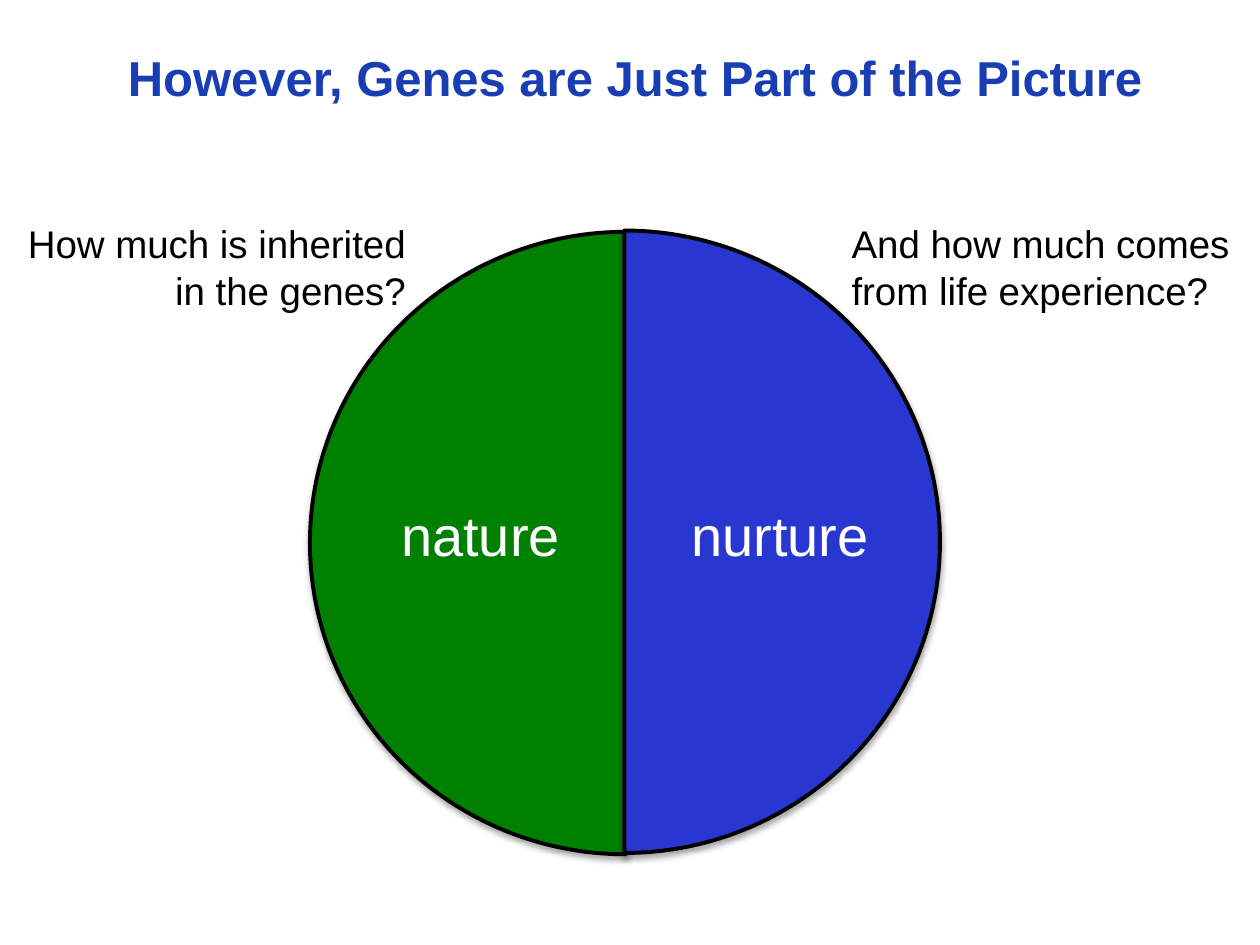
"""Build a slide with a circle split into nature and nurture halves."""
import lxml.etree
import pptx
import pptx.dml.color
import pptx.enum.shapes
import pptx.enum.text
import pptx.oxml
import pptx.oxml.ns
import pptx.util

Inches = pptx.util.Inches
RGB = pptx.dml.color.RGBColor.from_string
ALIGN = pptx.enum.text.PP_ALIGN
THEME = {
    "font": "Arial", "title": "193DB2", "ink": "000000", "label": "FFFFFF",
    "nature": "008000", "nurture": "2937D1",
    "title_size": 28, "label_size": 32, "note_size": 22, "line": 2.25,
}
SHADOW = (
    '<a:effectLst xmlns:a="http://schemas.openxmlformats.org/drawingml/2006/main">'
    '<a:outerShdw blurRad="40000" dist="23000" dir="5400000" rotWithShape="0">'
    '<a:srgbClr val="000000"><a:alpha val="35000"/></a:srgbClr>'
    '</a:outerShdw></a:effectLst>'
)


def write(sp, text, box, size, color, align=ALIGN.CENTER, bold=False, wrap=False):
    sp.left, sp.top, sp.width, sp.height = map(Inches, box)
    tf = sp.text_frame
    tf.text = text
    tf.word_wrap = wrap
    tf.auto_size = pptx.enum.text.MSO_AUTO_SIZE.SHAPE_TO_FIT_TEXT
    tf.vertical_anchor = pptx.enum.text.MSO_ANCHOR.TOP
    for p in tf.paragraphs:
        p.alignment = align
        for r in p.runs:
            r.font.name = THEME["font"]
            r.font.size = pptx.util.Pt(THEME[size])
            r.font.bold = bold
            r.font.color.rgb = RGB(THEME[color])


prs = pptx.Presentation()
prs.slide_width, prs.slide_height = Inches(10), Inches(7.5)
s = prs.slides.add_slide(prs.slide_layouts[5])

halves = [
    ("nature", 2.46, 1.84, 54, 162, (3.08, 3.92, 1.47, 0.64)),
    ("nurture", 2.45, 1.83, 162, 54, (5.38, 3.92, 1.62, 0.64)),
]
for name, left, top, start, end, box in halves:
    sp = s.shapes.add_shape(pptx.enum.shapes.MSO_SHAPE.PIE,
                            Inches(left), Inches(top), Inches(5.01), Inches(4.94))
    sp.adjustments[0], sp.adjustments[1] = start, end
    sp.fill.solid()
    sp.fill.fore_color.rgb = RGB(THEME[name])
    sp.line.color.rgb = RGB(THEME["ink"])
    sp.line.width = pptx.util.Pt(THEME["line"])
    sp.shadow.inherit = False
    effects = sp._element.spPr.find(pptx.oxml.ns.qn("a:effectLst"))
    effects.getparent().replace(effects, lxml.etree.fromstring(SHADOW))

for name, left, top, start, end, box in halves:
    write(s.shapes.add_textbox(0, 0, 0, 0), name, box, "label_size", "label")

write(s.shapes.add_textbox(0, 0, 0, 0), "How much is inherited\nin the genes?",
      (0.08, 1.7, 3.24, 0.84), "note_size", "ink", align=ALIGN.RIGHT)
write(s.shapes.title, "However, Genes are Just Part of the Picture",
      (0.84, 0.33, 8.4, 0.57), "title_size", "title", bold=True, wrap=True)
write(s.shapes.add_textbox(0, 0, 0, 0), "And how much comes\nfrom life experience?",
      (6.66, 1.7, 3.42, 0.84), "note_size", "ink", align=ALIGN.LEFT, wrap=True)

prs.save("out.pptx")
